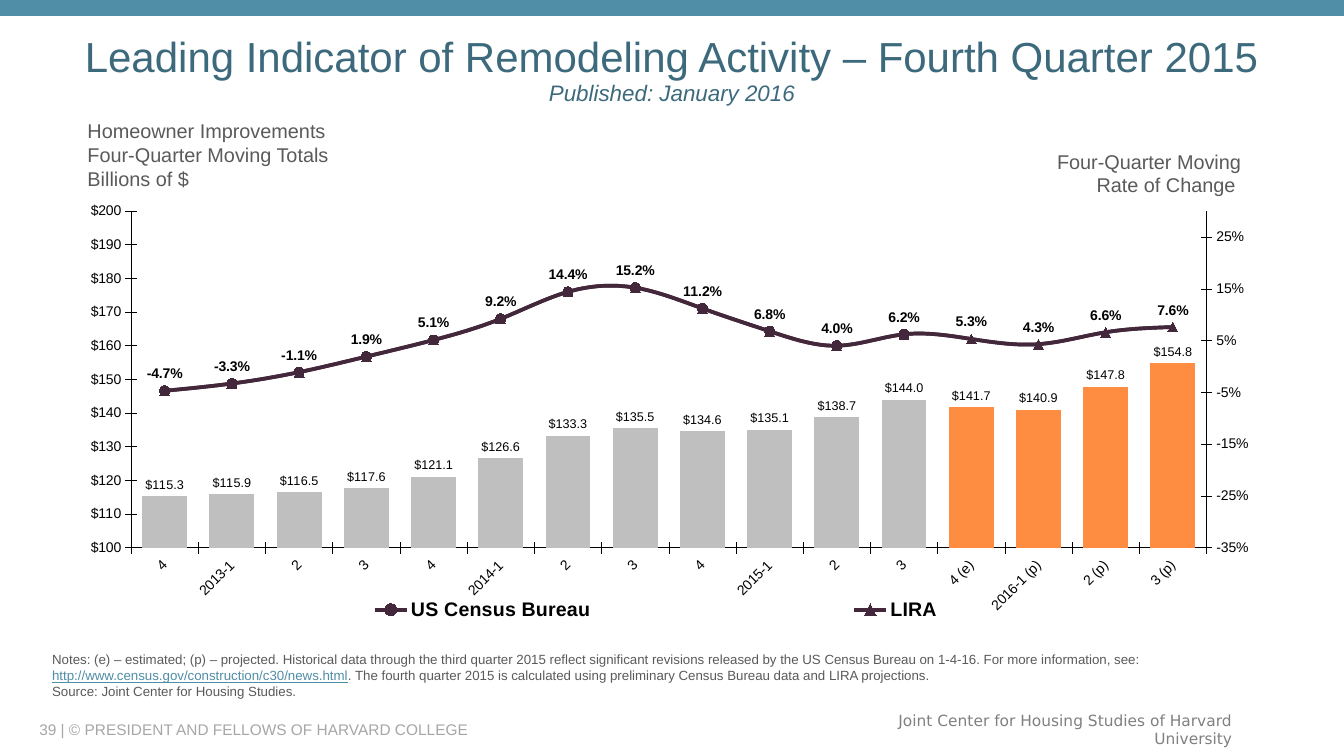
from copy import deepcopy

from pptx import Presentation
from pptx.chart.axis import CategoryAxis, ValueAxis
from pptx.chart.data import CategoryChartData
from pptx.dml.color import RGBColor
from pptx.enum.chart import XL_CHART_TYPE, XL_LABEL_POSITION, XL_LEGEND_POSITION, XL_MARKER_STYLE, XL_TICK_MARK
from pptx.enum.shapes import MSO_SHAPE
from pptx.enum.text import MSO_ANCHOR, PP_ALIGN
from pptx.oxml import parse_xml
from pptx.oxml.ns import nsdecls, qn
from pptx.util import Pt

LEFT, CENTER, RIGHT = PP_ALIGN.LEFT, PP_ALIGN.CENTER, PP_ALIGN.RIGHT
TOP, MIDDLE = MSO_ANCHOR.TOP, MSO_ANCHOR.MIDDLE
CIRCLE, TRIANGLE, NO_MARKER = XL_MARKER_STYLE.CIRCLE, XL_MARKER_STYLE.TRIANGLE, XL_MARKER_STYLE.NONE
CROSS, NO_TICK = XL_TICK_MARK.CROSS, XL_TICK_MARK.NONE
OUTSIDE_END, ABOVE = XL_LABEL_POSITION.OUTSIDE_END, XL_LABEL_POSITION.ABOVE

TEAL, DARK_TEAL, GREY, PLUM = "508DA6", "3C6A7C", "5A5A5A", "43273A"
BAR_GREY, BAR_ORANGE, BLACK = "BFBFBF", "FF8D41", "000000"

TITLE = [[("Leading Indicator of Remodeling Activity – Fourth Quarter 2015\v", {}),
          ("Published: January 2016", {"size": 16, "italic": True})]]
LEFT_CAPTION = ["Homeowner Improvements", "Four-Quarter Moving Totals", "Billions of $"]
RIGHT_CAPTION = ["Four-Quarter Moving", "Rate of Change "]
NOTES = [
    [("Notes: (e) – estimated; (p) – projected. Historical data through the third quarter 2015 reflect "
      "significant revisions released by the US Census Bureau on 1-4-16. For more information, see: ", {}),
     ("http://www.census.gov/construction/c30/news.html", {"color": TEAL, "underline": True}),
     (". The fourth quarter 2015 is calculated using preliminary Census Bureau data and LIRA projections.", {})],
    "Source: Joint Center for Housing Studies.",
]
COPYRIGHT = ["39 | © PRESIDENT AND FELLOWS OF HARVARD COLLEGE"]
CENTER_NAME = ["Joint Center for Housing Studies of Harvard University"]

QUARTERS = [
    ("4", 115.3, -0.047), ("2013-1", 115.9, -0.033), ("2", 116.5, -0.011), ("3", 117.6, 0.019),
    ("4", 121.1, 0.051), ("2014-1", 126.6, 0.092), ("2", 133.3, 0.144), ("3", 135.5, 0.152),
    ("4", 134.6, 0.112), ("2015-1", 135.1, 0.068), ("2", 138.7, 0.04), ("3", 144, 0.062),
    ("4 (e)", 141.7, 0.053), ("2016-1 (p)", 140.9, 0.043), ("2 (p)", 147.8, 0.066), ("3 (p)", 154.8, 0.076),
]
FIRST_ESTIMATE = 12
PLOT_BOX = {"x": 0.061, "y": 0.062, "w": 0.879, "h": 0.754}
LEGEND_BOX = {"x": 0.05, "y": 0.92, "w": 0.88, "h": 0.07}


def rgb(color):
    return RGBColor.from_string(color)


def set_font(font, size, color=BLACK, name="Arial", bold=False, italic=False, underline=False):
    font.size, font.name, font.bold, font.italic = Pt(size), name, bold, italic
    font.color.rgb = rgb(color)
    if underline:
        font.underline = True


def add_text(s, paragraphs, box, align=LEFT, anchor=TOP, spacing=None, **fmt):
    tf = s.shapes.add_textbox(*map(Pt, box)).text_frame
    tf.word_wrap, tf.vertical_anchor = True, anchor
    for i, runs in enumerate(paragraphs):
        p = tf.paragraphs[0] if i == 0 else tf.add_paragraph()
        p.alignment = align
        if spacing:
            p.line_spacing = spacing
        for text, extra in [(runs, {})] if isinstance(runs, str) else runs:
            line, *rest = text.split("\v")
            r = p.add_run()
            r.text = line
            set_font(r.font, **{**fmt, **extra})
            if rest:
                p.add_line_break()


def style_axis(axis, number_format=None, low=None, high=None, step=None):
    axis.has_major_gridlines = False
    axis.major_tick_mark, axis.minor_tick_mark = CROSS, NO_TICK
    axis.format.line.color.rgb = rgb(BLACK)
    axis.format.line.width = Pt(0.33)
    set_font(axis.tick_labels.font, 10)
    if number_format:
        axis.tick_labels.number_format = number_format
        axis.tick_labels.number_format_is_linked = False
        axis.minimum_scale, axis.maximum_scale, axis.major_unit = low, high, step


def add_labels(series, number_format, position, **fmt):
    labels = series.data_labels
    labels.show_value = True
    labels.number_format, labels.number_format_is_linked = number_format, False
    labels.position = position
    set_font(labels.font, **fmt)


def place(parent, index, box, target=""):
    for layout in parent.findall(qn("c:layout")):
        parent.remove(layout)
    sizes = "".join(f'<c:{key} val="{value}"/>' for key, value in box.items())
    parent.insert(index, parse_xml(
        f'<c:layout {nsdecls("c")}><c:manualLayout>{target}<c:xMode val="edge"/><c:yMode val="edge"/>'
        f'{sizes}</c:manualLayout></c:layout>'))


def move_to_right_axis(chart, line_series):
    plot_area = chart.plots[0]._element.getparent()
    line_chart = parse_xml(
        f'<c:lineChart {nsdecls("c")}><c:grouping val="standard"/><c:varyColors val="0"/>'
        '<c:marker val="1"/><c:axId val="1001"/><c:axId val="1002"/></c:lineChart>')
    for series in line_series:
        ser = series._element
        for flag in ser.findall(qn("c:invertIfNegative")):
            ser.remove(flag)
        line_chart.find(qn("c:marker")).addprevious(ser)
    chart.plots[0]._element.addnext(line_chart)

    cat_ax, val_ax = plot_area.find(qn("c:catAx")), plot_area.find(qn("c:valAx"))
    right_cat, right_val = deepcopy(cat_ax), deepcopy(val_ax)
    for axis, own, other in ((right_cat, "1001", "1002"), (right_val, "1002", "1001")):
        axis.find(qn("c:axId")).set("val", own)
        axis.find(qn("c:crossAx")).set("val", other)
    right_val.find(qn("c:axPos")).set("val", "r")
    right_val.find(qn("c:crosses")).set("val", "max")
    val_ax.addnext(right_val)
    right_val.addnext(right_cat)
    CategoryAxis(right_cat).visible = False
    return ValueAxis(right_val)


def add_remodeling_chart(s):
    names, totals, rates = zip(*QUARTERS)
    data = CategoryChartData()
    data.categories = names
    for name, values in (("Series 1", totals), ("US Census Bureau", rates), ("LIRA", rates)):
        data.add_series(name, values)
    chart = s.shapes.add_chart(XL_CHART_TYPE.COLUMN_CLUSTERED, Pt(40.3), Pt(131), Pt(874), Pt(319), data).chart
    chart.has_title = False
    set_font(chart.font, 13.2)

    quarter_axis, left_axis = chart.category_axis, chart.value_axis
    right_axis = move_to_right_axis(chart, list(chart.plots[0].series)[1:])
    style_axis(quarter_axis)
    style_axis(left_axis, r"\$#,##0", 100, 200, 10)
    style_axis(right_axis, "0%", -0.35, 0.3, 0.1)
    quarter_axis._element.find(qn("c:txPr")).find(qn("a:bodyPr")).set("rot", "-2700000")

    bar_plot, line_plot = chart.plots
    bar_plot.gap_width, bar_plot.vary_by_categories = 50, False
    bars = bar_plot.series[0]
    bars.format.fill.solid()
    bars.format.fill.fore_color.rgb = rgb(BAR_GREY)
    census, lira = line_plot.series
    for series, style in ((census, CIRCLE), (lira, TRIANGLE)):
        series.smooth = True
        series.format.line.color.rgb = rgb(PLUM)
        series.format.line.width = Pt(2.64)
        series.marker.style, series.marker.size = style, 7
        series.marker.format.fill.solid()
        series.marker.format.fill.fore_color.rgb = rgb(PLUM)
        series.marker.format.line.color.rgb = rgb(PLUM)
    for i in range(FIRST_ESTIMATE, len(QUARTERS)):
        fill = bars.points[i].format.fill
        fill.solid()
        fill.fore_color.rgb = rgb(BAR_ORANGE)
        point = census.points[i]
        point.marker.style = NO_MARKER
        point.format.line.color.rgb = rgb(PLUM)
        point.format.line.width = Pt(2.64)
    add_labels(bars, r"\$#,##0.0", OUTSIDE_END, size=9)
    add_labels(lira, "0.0%", ABOVE, size=10, bold=True)

    chart.has_legend = True
    legend = chart.legend
    legend.position, legend.include_in_layout = XL_LEGEND_POSITION.BOTTOM, False
    set_font(legend.font, 14, bold=True)
    legend._element.find(qn("c:legendPos")).addnext(parse_xml(
        f'<c:legendEntry {nsdecls("c")}><c:idx val="0"/><c:delete val="1"/></c:legendEntry>'))
    place(legend._element, 2, LEGEND_BOX)
    place(bar_plot._element.getparent(), 0, PLOT_BOX, '<c:layoutTarget val="inner"/>')


def main():
    prs = Presentation()
    prs.slide_width, prs.slide_height = Pt(960), Pt(540)
    s = prs.slides.add_slide(prs.slide_layouts[6])
    band = s.shapes.add_shape(MSO_SHAPE.RECTANGLE, 0, 0, prs.slide_width, Pt(11.3))
    band.shadow.inherit = False
    band.fill.solid()
    band.fill.fore_color.rgb = rgb(TEAL)
    band.line.fill.background()

    add_text(s, COPYRIGHT, (21, 513.5, 570, 14.4), anchor=MIDDLE, size=11, color="A6A6A6")
    add_text(s, CENTER_NAME, (606.3, 510.5, 281, 21), RIGHT, MIDDLE, size=11, color="808080", name="DejaVu Sans")
    add_text(s, TITLE, (40, 24, 880, 54), CENTER, MIDDLE, 0.9, size=30, color=DARK_TEAL)
    add_text(s, LEFT_CAPTION, (55.4, 81.4, 276, 59), size=14.2, color=GREY)
    add_text(s, RIGHT_CAPTION, (601.2, 103, 292.3, 41.8), RIGHT, size=14.2, color=GREY)
    add_remodeling_chart(s)
    add_text(s, NOTES, (30.2, 461.5, 832.3, 41.8), size=9.5, color=GREY)
    prs.save("out.pptx")


if __name__ == "__main__":
    main()
